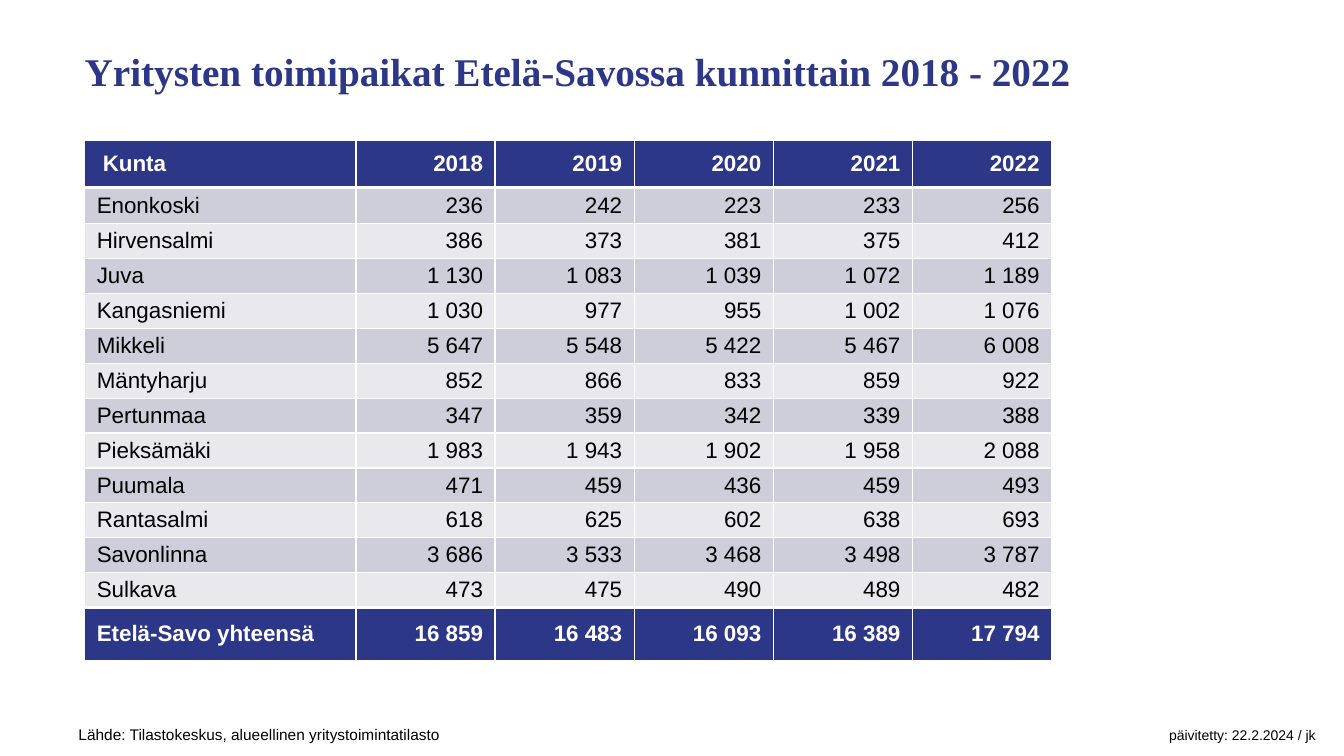
from pptx import Presentation, util as u
from pptx.dml.color import RGBColor
from pptx.enum import text
from pptx.oxml import parse_xml
from pptx.oxml.ns import nsdecls

HUES = {"navy": "2D3787", "odd": "CDCED9", "even": "E8E8ED", "white": "FFFFFF", "black": "000000"}
YEARS = ["2018", "2019", "2020", "2021", "2022"]
TOWNS = {
    "Enonkoski": [236, 242, 223, 233, 256],
    "Hirvensalmi": [386, 373, 381, 375, 412],
    "Juva": [1130, 1083, 1039, 1072, 1189],
    "Kangasniemi": [1030, 977, 955, 1002, 1076],
    "Mikkeli": [5647, 5548, 5422, 5467, 6008],
    "Mäntyharju": [852, 866, 833, 859, 922],
    "Pertunmaa": [347, 359, 342, 339, 388],
    "Pieksämäki": [1983, 1943, 1902, 1958, 2088],
    "Puumala": [471, 459, 436, 459, 493],
    "Rantasalmi": [618, 625, 602, 638, 693],
    "Savonlinna": [3686, 3533, 3468, 3498, 3787],
    "Sulkava": [473, 475, 490, 489, 482],
}
TOTALS = [16859, 16483, 16093, 16389, 17794]


def group(nums):
    return [f"{n:,}".replace(",", " ") for n in nums]


class Deck:
    def __init__(self):
        self.prs = Presentation()
        self.prs.slide_width = u.Inches(13.33)
        self.prs.slide_height = u.Inches(7.5)
        self.slide = self.prs.slides.add_slide(self.prs.slide_layouts[6])

    def style(self, para, hue, size=None, bold=False, face="Arial"):
        font = para.font
        font.name, font.bold = face, bold
        font.color.rgb = RGBColor.from_string(HUES[hue])
        if size:
            font.size = u.Pt(size)

    def box(self, left, top, width, height):
        frame = self.slide.shapes.add_textbox(*map(u.Inches, (left, top, width, height))).text_frame
        frame.word_wrap = True
        return frame

    def title(self, words):
        frame = self.box(0.84, 0.44, 10.95, 0.55)
        frame.margin_left = frame.margin_right = frame.margin_top = 0
        frame.vertical_anchor = text.MSO_ANCHOR.BOTTOM
        para = frame.paragraphs[0]
        para.text = words
        self.style(para, "navy", 28, True, "Times New Roman")

    def footer(self, source, date):
        para = self.box(0.68, 7.14, 12.52, 0.33).paragraphs[0]
        stop = u.Inches(12.27)
        tabs = f'<a:tabLst {nsdecls("a")}><a:tab pos="{stop}" algn="r"/></a:tabLst>'
        para._p.get_or_add_pPr().append(parse_xml(tabs))
        self.style(para, "black")
        for words, size in ((source + "\t", 11), (date, 10)):
            run = para.add_run()
            run.text = words
            run.font.size = u.Pt(size)

    def edge(self, cell, sides):
        for side, width in sides.items():
            cell._tc.get_or_add_tcPr().append(parse_xml(
                f'<a:ln{side} {nsdecls("a")} w="{u.Pt(width)}"><a:solidFill>'
                f'<a:srgbClr val="{HUES["white"]}"/></a:solidFill></a:ln{side}>'))

    def cell(self, cell, words, first, fill, hue, bold, sides):
        self.edge(cell, sides)
        cell.fill.solid()
        cell.fill.fore_color.rgb = RGBColor.from_string(HUES[fill])
        cell.vertical_anchor = text.MSO_ANCHOR.MIDDLE
        cell.margin_top = cell.margin_bottom = 0
        cell.margin_left = u.Inches(0.12 if first else 0)
        cell.margin_right = u.Inches(0 if first else 0.12)
        para = cell.text_frame.paragraphs[0]
        para.text = words
        para.alignment = text.PP_ALIGN.LEFT if first else text.PP_ALIGN.RIGHT
        self.style(para, hue, 16, bold)

    def table(self, rows, widths, heights):
        last = len(rows) - 1
        spot = map(u.Inches, (0.84, 1.39, sum(widths), sum(heights)))
        grid = self.slide.shapes.add_table(len(rows), len(widths), *spot).table
        for col, width in zip(grid.columns, widths):
            col.width = u.Inches(width)
        for r, (row, height) in enumerate(zip(rows, heights)):
            grid.rows[r].height = u.Inches(height)
            bold = r in (0, last)
            fill = "navy" if bold else "odd" if r % 2 else "even"
            sides = {"L": 1, "R": 1, "T": 3 if r in (1, last) else 1,
                     "B": 3 if r in (0, last - 1) else 1}
            for c, words in enumerate(row):
                self.cell(grid.cell(r, c), words, c == 0, fill,
                          "white" if bold else "black", bold, sides)
        grid.cell(0, 0).margin_left = u.Inches(0.18)


def main():
    deck = Deck()
    deck.title("Yritysten toimipaikat Etelä-Savossa kunnittain 2018 - 2022")
    deck.footer("Lähde: Tilastokeskus, alueellinen yritystoimintatilasto", "päivitetty: 22.2.2024 / jk")
    rows = [["Kunta", *YEARS]]
    rows += [[town, *group(nums)] for town, nums in TOWNS.items()]
    rows.append(["Etelä-Savo yhteensä", *group(TOTALS)])
    head, lead, foot = 0.47, 0.36, 0.53
    rest = len(TOWNS) - 1
    body = (5.17 - head - lead - foot) / rest
    deck.table(rows, [2.69] + [1.38] * len(YEARS), [head, lead] + [body] * rest + [foot])
    deck.prs.save("out.pptx")


if __name__ == "__main__":
    main()
